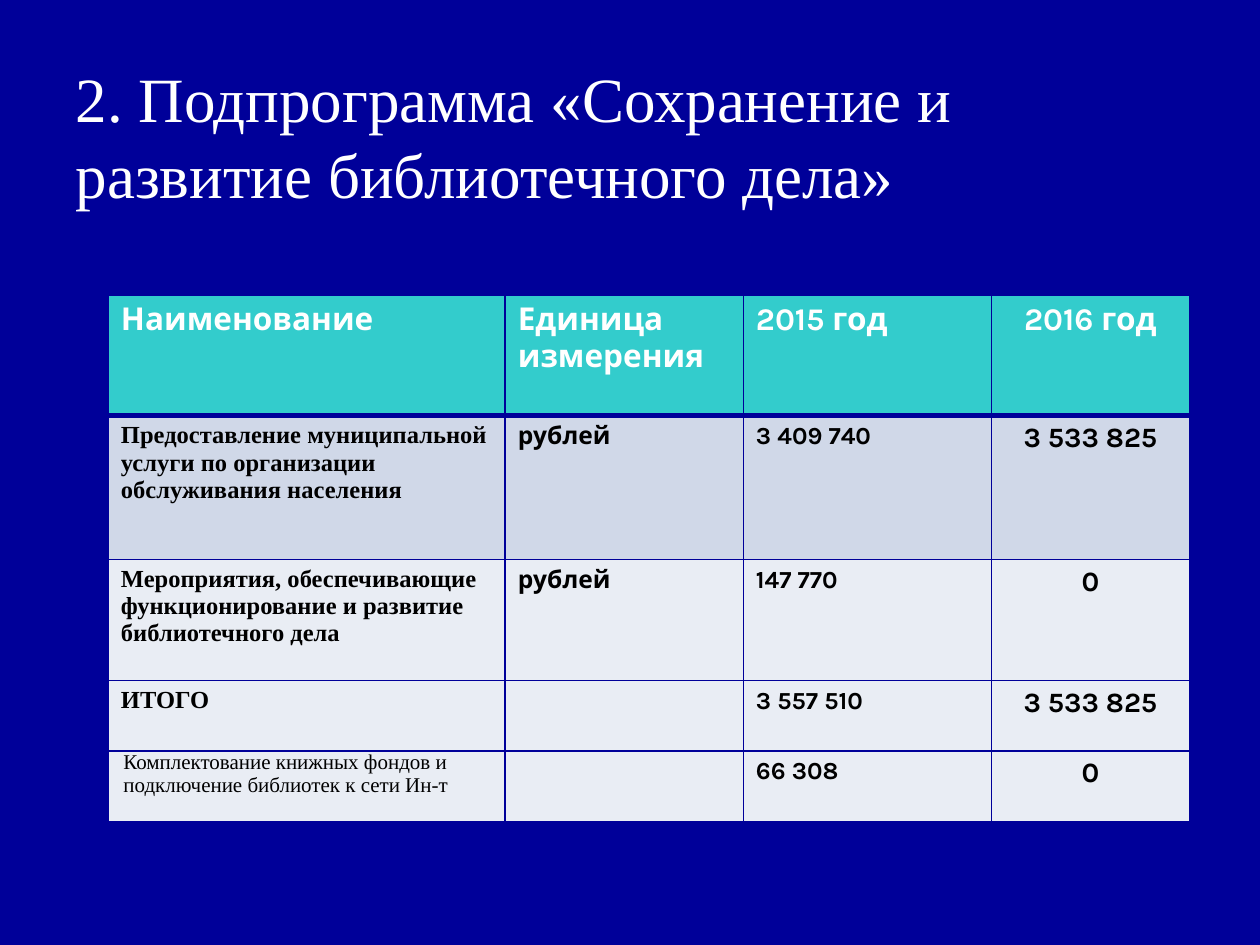
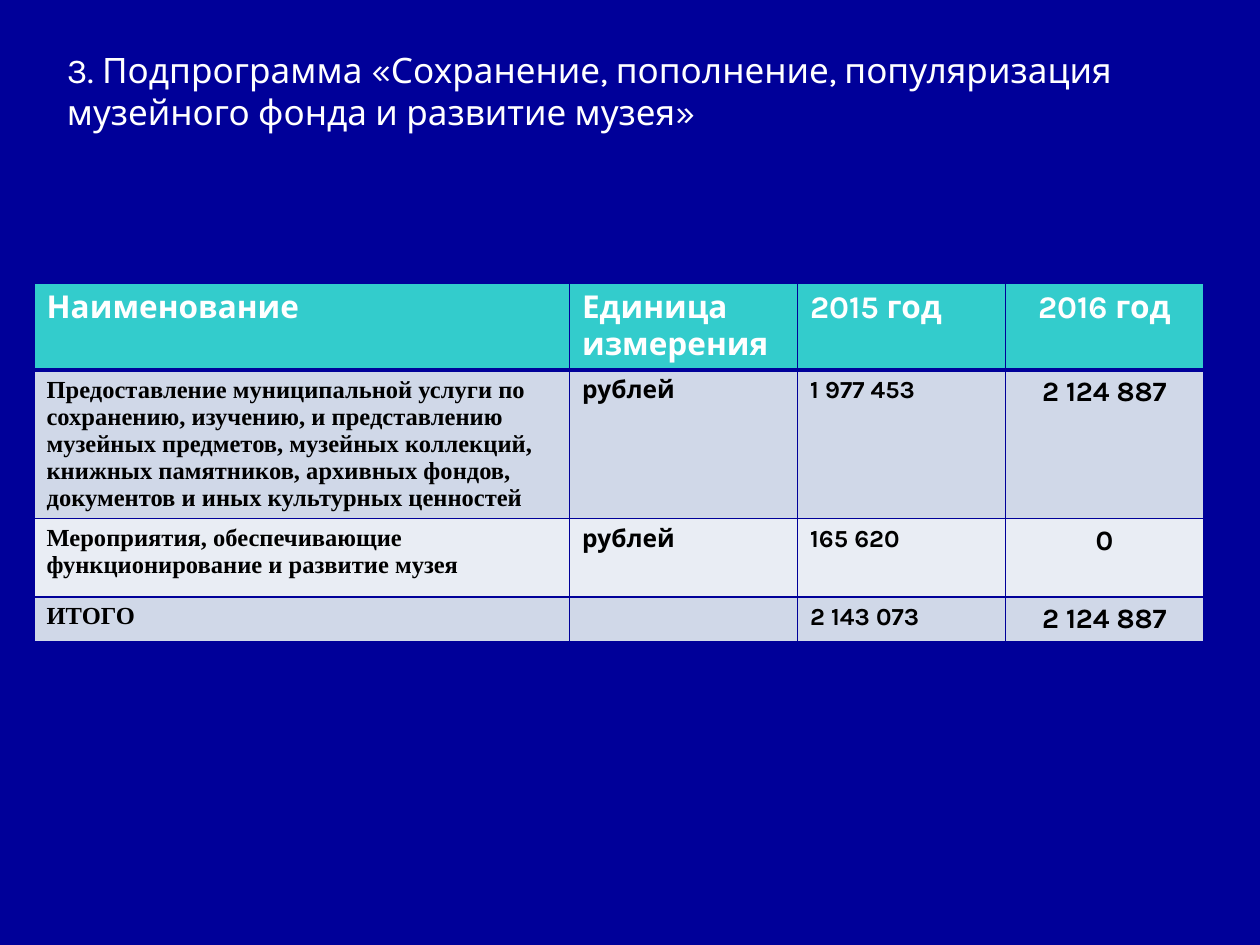
from dataclasses import dataclass

import lxml.etree
import pptx
import pptx.dml.color
import pptx.enum.text
import pptx.oxml.ns
import pptx.slide
import pptx.table
import pptx.util
from pptx.util import Inches

COLORS = {
    "background": "000099",
    "header": "33CCCC",
    "dark_band": "D0D8E8",
    "light_band": "E9EDF4",
    "light_text": "FFFFFF",
    "dark_text": "000000",
}
SERIF = "Times New Roman"
SANS = "Karla"
HEADINGS = ("Наименование", "Единица измерения", "2015 год", "2016 год")
LEFT = pptx.enum.text.PP_ALIGN.LEFT
CENTER = pptx.enum.text.PP_ALIGN.CENTER


@dataclass
class TextStyle:
    font: str
    size: int
    color: str = "dark_text"
    bold: bool = True
    align: pptx.enum.text.PP_ALIGN = LEFT


@dataclass
class BudgetRow:
    values: tuple[str, str, str, str]
    height: float
    band: str = "light_band"
    is_note: bool = False


@dataclass
class Subprogram:
    title: str
    title_box: tuple[float, float, float, float]
    title_style: TextStyle
    table_origin: tuple[float, float]
    column_widths: tuple[float, ...]
    header_height: float
    rows: list[BudgetRow]


BODY_STYLES = (
    TextStyle(SERIF, 14),
    TextStyle(SANS, 14),
    TextStyle(SANS, 14),
    TextStyle(SANS, 16, align=CENTER),
)
HEADER_STYLES = tuple(
    TextStyle(SANS, 18, "light_text", align=body.align) for body in BODY_STYLES
)
NOTE_STYLE = TextStyle(SERIF, 12, bold=False)

SUBPROGRAMS = [
    Subprogram(
        title="2. Подпрограмма «Сохранение и развитие библиотечного дела»",
        title_box=(0.5, 0.32, 9, 1.51),
        title_style=TextStyle(SERIF, 36, "light_text", bold=False),
        table_origin=(0.86, 2.34),
        column_widths=(3.15, 1.89, 1.97, 1.57),
        header_height=0.96,
        rows=[
            BudgetRow(
                ("Предоставление муниципальной услуги по организации обслуживания населения",
                 "рублей", "3 409 740", "3 533 825"), 1.14, "dark_band"),
            BudgetRow(
                ("Мероприятия, обеспечивающие функционирование и развитие библиотечного дела",
                 "рублей", "147 770", "0"), 0.96),
            BudgetRow(("ИТОГО", "", "3 557 510", "3 533 825"), 0.56),
            BudgetRow(
                ("Комплектование книжных фондов и подключение библиотек к сети Ин-т",
                 "", "66 308", "0"), 0.56, is_note=True),
        ],
    ),
    Subprogram(
        title="3. Подпрограмма «Сохранение, пополнение, популяризация музейного фонда "
              "и развитие музея»",
        title_box=(0.43, 0.21, 9, 1.02),
        title_style=TextStyle(SANS, 20, "light_text", bold=False),
        table_origin=(0.27, 2.25),
        column_widths=(4.25, 1.81, 1.65, 1.57),
        header_height=0.67,
        rows=[
            BudgetRow(
                ("Предоставление муниципальной услуги по сохранению, изучению, и представлению "
                 "музейных предметов, музейных коллекций, книжных памятников, архивных фондов, "
                 "документов и иных культурных ценностей",
                 "рублей", "1 977 453", "2 124 887"), 1.18, "dark_band"),
            BudgetRow(
                ("Мероприятия, обеспечивающие функционирование и развитие музея",
                 "рублей", "165 620", "0"), 0.62),
            BudgetRow(("ИТОГО", "", "2 143 073", "2 124 887"), 0.36, "dark_band"),
        ],
    ),
]


def rgb(name: str) -> pptx.dml.color.RGBColor:
    return pptx.dml.color.RGBColor.from_string(COLORS[name])


def write_text(frame, text: str, style: TextStyle) -> None:
    frame.text = text
    paragraph = frame.paragraphs[0]
    paragraph.alignment = style.align
    paragraph.font.name = style.font
    paragraph.font.size = pptx.util.Pt(style.size)
    paragraph.font.bold = style.bold
    paragraph.font.color.rgb = rgb(style.color)


def set_borders(cell: pptx.table._Cell, top: int, bottom: int) -> None:
    """Draw all four cell borders; widths are in points."""
    properties = cell._tc.get_or_add_tcPr()
    qn = pptx.oxml.ns.qn
    for side, width in (("L", 1), ("R", 1), ("T", top), ("B", bottom)):
        line = lxml.etree.SubElement(
            properties, qn(f"a:ln{side}"), w=str(pptx.util.Pt(width)))
        fill = lxml.etree.SubElement(line, qn("a:solidFill"))
        lxml.etree.SubElement(fill, qn("a:srgbClr"), val=COLORS["background"])


def add_title(slide: pptx.slide.Slide, subprogram: Subprogram) -> None:
    title = slide.shapes.title
    title.left, title.top, title.width, title.height = map(Inches, subprogram.title_box)
    write_text(title.text_frame, subprogram.title, subprogram.title_style)
    title.text_frame.word_wrap = True
    title.text_frame.vertical_anchor = pptx.enum.text.MSO_ANCHOR.MIDDLE


def add_budget_table(slide: pptx.slide.Slide, subprogram: Subprogram) -> None:
    header = BudgetRow(HEADINGS, subprogram.header_height, "header")
    rows = [header, *subprogram.rows]
    left, top = subprogram.table_origin
    widths = subprogram.column_widths
    table = slide.shapes.add_table(
        len(rows), len(widths), Inches(left), Inches(top),
        Inches(sum(widths)), Inches(sum(row.height for row in rows))).table
    table.horz_banding = False
    for column, width in zip(table.columns, widths):
        column.width = Inches(width)

    for row_index, row in enumerate(rows):
        table.rows[row_index].height = Inches(row.height)
        styles = HEADER_STYLES if row is header else BODY_STYLES
        for column_index, (text, style) in enumerate(zip(row.values, styles)):
            cell = table.cell(row_index, column_index)
            set_borders(cell, top=3 if row_index == 1 else 1,
                        bottom=3 if row is header else 1)
            cell.fill.solid()
            cell.fill.fore_color.rgb = rgb(row.band)
            is_note_cell = row.is_note and column_index == 0
            if is_note_cell:
                cell.margin_left = cell.margin_right = Inches(0.12)
            if is_note_cell or not text:
                cell.margin_top = cell.margin_bottom = 0
            write_text(cell.text_frame, text, NOTE_STYLE if is_note_cell else style)


def main() -> None:
    presentation = pptx.Presentation()
    presentation.slide_width = Inches(10)
    presentation.slide_height = Inches(7.5)
    background = presentation.slide_master.background.fill
    background.solid()
    background.fore_color.rgb = rgb("background")

    title_only = presentation.slide_layouts[5]
    for subprogram in SUBPROGRAMS:
        slide = presentation.slides.add_slide(title_only)
        add_title(slide, subprogram)
        add_budget_table(slide, subprogram)
    presentation.save("out.pptx")


if __name__ == "__main__":
    main()
